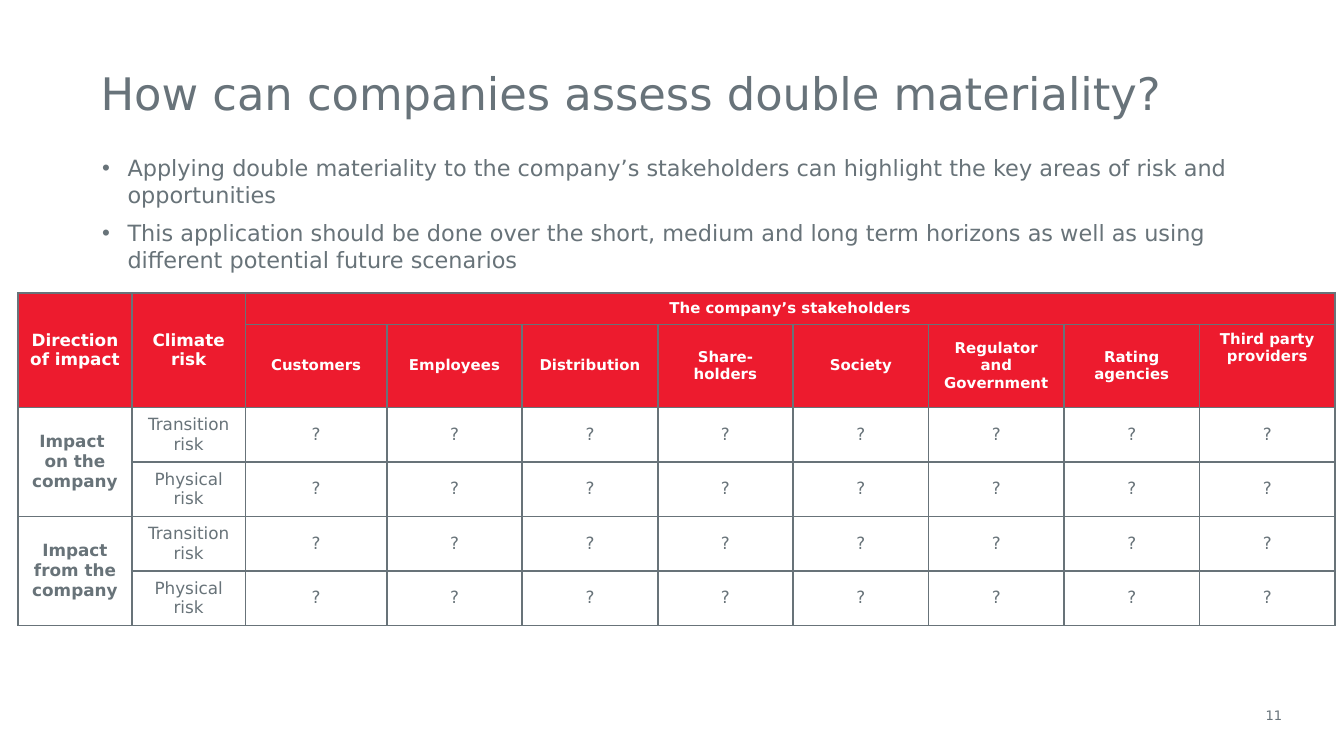
from lxml.etree import SubElement
from pptx import Presentation
from pptx.dml.color import RGBColor
from pptx.enum.text import MSO_ANCHOR as ANCHOR, MSO_AUTO_SIZE as FIT, PP_ALIGN as ALIGN
from pptx.oxml.ns import qn
from pptx.util import Cm, Pt

TITLE = "How can companies assess double materiality?"
BULLETS = [
    "Applying double materiality to the company’s stakeholders can highlight the key areas of risk and opportunities",
    "This application should be done over the short, medium and long term horizons as well as using different potential future scenarios",
]
PAGE = "11"
CORNERS = ["Direction of impact", "Climate risk"]
GROUP = "The company’s stakeholders"
STAKEHOLDERS = ["Customers", "Employees", "Distribution", "Share-holders", "Society",
                "Regulator and Government", "Rating agencies", "Third party providers"]
IMPACTS = ["Impact \non the company", "Impact from the company"]
RISKS = ["Transition risk", "Physical risk"]
MARK = "?"

COLORS = {"title": "68737A", "text": "687379", "red": "ED1B2E", "white": "FFFFFF"}
FONT = "DejaVu Sans"
COLS = [2.15, 2.15, 2.67] + [2.56] * 7
ROWS = [0.59, 1.57] + [1.03] * 4

FRAME = dict(margin_left=0, margin_right=0, margin_top=0, margin_bottom=0,
             word_wrap=True, auto_size=FIT.NONE, vertical_anchor=ANCHOR.TOP)
CELL = dict(margin_left=Cm(0.22), margin_right=Cm(0.22), margin_top=Cm(0.12),
            margin_bottom=Cm(0.12), vertical_anchor=ANCHOR.MIDDLE)


def apply(obj, values):
    for name, value in values.items():
        setattr(obj, name, value)


def place(shape, left, top, width, height):
    apply(shape, dict(left=Cm(left), top=Cm(top), width=Cm(width), height=Cm(height)))


def write(tf, lines, size, color, bold=False, **layout):
    for i, line in enumerate(lines):
        p = tf.paragraphs[0] if i == 0 else tf.add_paragraph()
        apply(p, layout)
        r = p.add_run()
        r.text = line
        apply(r.font, dict(name=FONT, size=Pt(size), bold=bold))
        r.font.color.rgb = RGBColor.from_string(COLORS[color])


def add_bullet(p):
    pPr = p._p.get_or_add_pPr()
    pPr.set("marL", str(Cm(0.48)))
    pPr.set("indent", str(-Cm(0.48)))
    SubElement(pPr, qn("a:buFont"), typeface="Arial")
    SubElement(pPr, qn("a:buChar"), char="•")


def add_borders(cell):
    tcPr = cell._tc.get_or_add_tcPr()
    for i, side in enumerate(("lnL", "lnR", "lnT", "lnB")):
        ln = SubElement(tcPr, qn(f"a:{side}"), w=str(Pt(1)))
        SubElement(SubElement(ln, qn("a:solidFill")), qn("a:srgbClr"), val=COLORS["text"])
        tcPr.remove(ln)
        tcPr.insert(i, ln)


def fill_cell(cell, text, size, header=False, bold=False):
    color = "white" if header else "text"
    write(cell.text_frame, text.split("\n"), size, color, bold, alignment=ALIGN.CENTER)


prs = Presentation()
prs.slide_width, prs.slide_height = Cm(25.4), Cm(14.29)
s = prs.slides.add_slide(prs.slide_layouts[1])

title, body = s.placeholders
place(title, 1.9, 1.27, 21.7, 0.82)
apply(title.text_frame, FRAME)
write(title.text_frame, [TITLE], 24, "title", alignment=ALIGN.LEFT, line_spacing=Pt(28))

place(body, 1.9, 2.92, 21.5, 3.43)
apply(body.text_frame, FRAME | dict(margin_left=Cm(0.03)))
write(body.text_frame, BULLETS, 12, "text", space_before=Pt(0), space_after=Pt(6))
for p in body.text_frame.paragraphs:
    add_bullet(p)

page = s.shapes.add_textbox(Cm(23.8), Cm(13.38), Cm(0.43), Cm(0.3))
apply(page.text_frame, FRAME | dict(word_wrap=False))
write(page.text_frame, [PAGE], 7, "title", alignment=ALIGN.RIGHT, line_spacing=Pt(8))

table = s.shapes.add_table(len(ROWS), len(COLS), Cm(0.34), Cm(5.54),
                           Cm(sum(COLS)), Cm(sum(ROWS))).table
apply(table, dict(first_row=False, horz_banding=False))
for col, width in zip(table.columns, COLS):
    col.width = Cm(width)
for i, (row, height) in enumerate(zip(table.rows, ROWS)):
    row.height = Cm(height)
    for cell in row.cells:
        apply(cell, CELL)
        if i < 2:
            cell.fill.solid()
            cell.fill.fore_color.rgb = RGBColor.from_string(COLORS["red"])
        else:
            cell.fill.background()
        add_borders(cell)

for c, text in enumerate(CORNERS):
    table.cell(0, c).merge(table.cell(1, c))
    fill_cell(table.cell(0, c), text, 9, header=True, bold=True)
table.cell(0, 2).merge(table.cell(0, len(COLS) - 1))
fill_cell(table.cell(0, 2), GROUP, 8, header=True, bold=True)
for c, text in enumerate(STAKEHOLDERS, 2):
    fill_cell(table.cell(1, c), text, 8, header=True, bold=True)
table.cell(1, len(COLS) - 1).vertical_anchor = ANCHOR.TOP

for i, impact in enumerate(IMPACTS):
    top = 2 + i * len(RISKS)
    table.cell(top, 0).merge(table.cell(top + 1, 0))
    fill_cell(table.cell(top, 0), impact, 9, bold=True)
    for r, risk in enumerate(RISKS, top):
        for c, text in enumerate([risk] + [MARK] * len(STAKEHOLDERS), 1):
            fill_cell(table.cell(r, c), text, 9)

prs.save("out.pptx")
